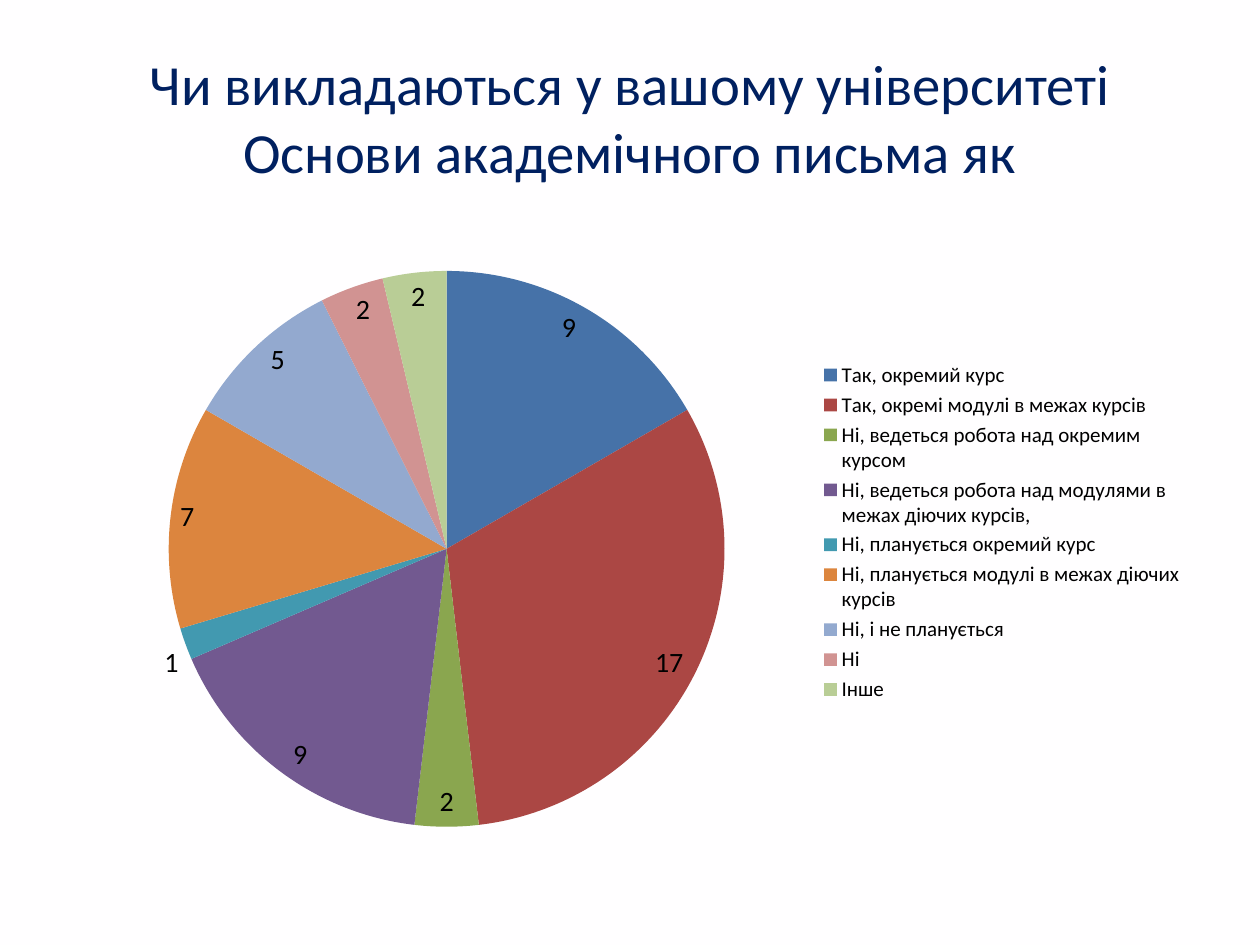
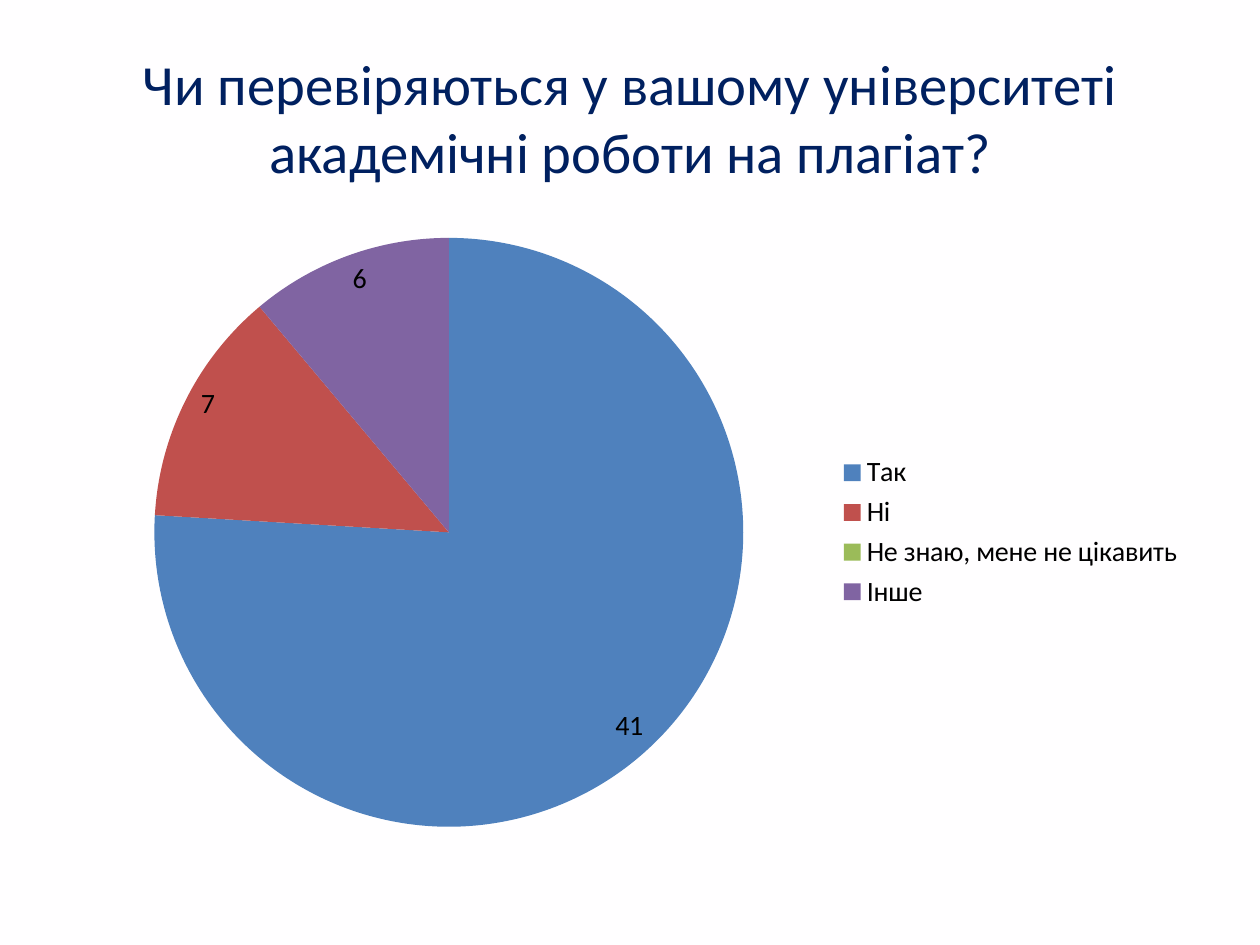
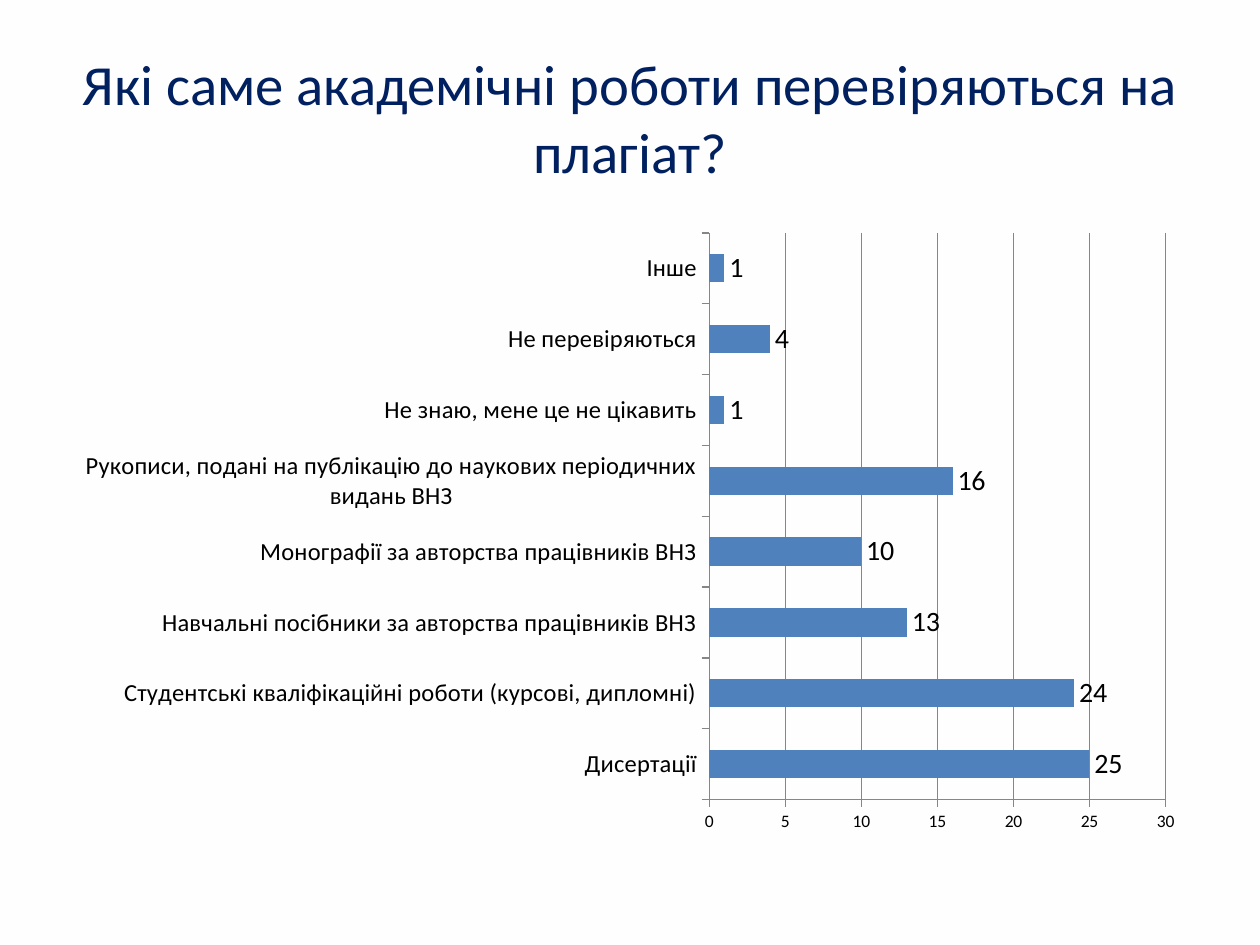
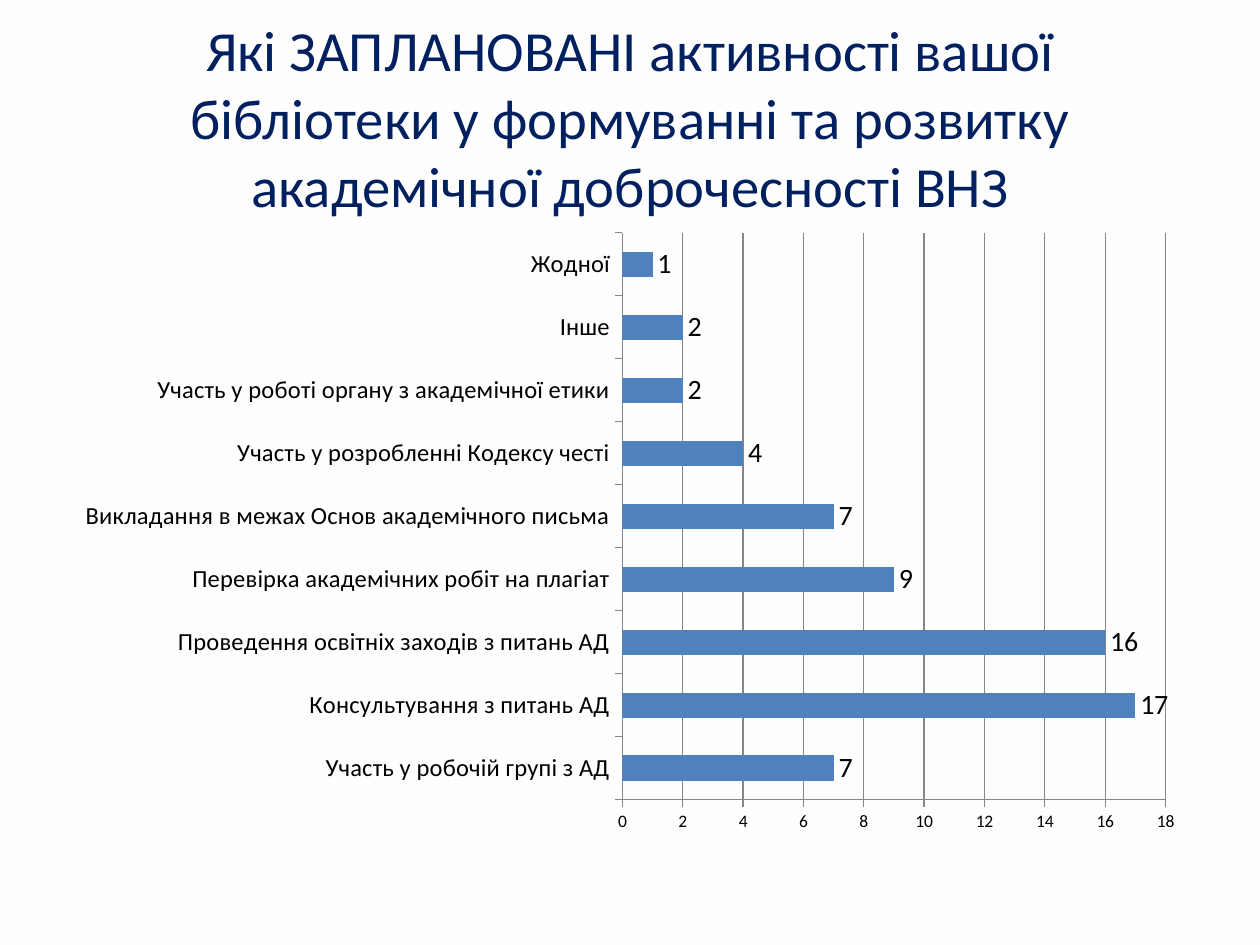
from pptx import Presentation
from pptx.chart.data import CategoryChartData
from pptx.dml.color import RGBColor
from pptx.enum import chart as kinds, text
from pptx.util import Inches, Pt

FONT = "Calibri"
NAVY, BLACK, PAPER, GREY = "002060", "000000", "FFFEFF", "868686"
BASE = ["4F81BD", "C0504D", "9BBB59", "8064A2"]
WIDE = ["4672A8", "AB4744", "8AA64F", "725990", "4299B0", "DC853E",
        "93A9CF", "D19392", "B9CD96"]
HEAD = (0.5, 0.3, 9, 1.25)
BODY = (0.5, 1.75, 9, 4.95)

COURSES = [
    ("Так, окремий курс", 9),
    ("Так, окремі модулі в межах курсів", 17),
    ("Ні, ведеться робота над окремим курсом", 2),
    ("Ні, ведеться робота над модулями в межах діючих курсів,", 9),
    ("Ні, планується окремий курс", 1),
    ("Ні, планується модулі в межах діючих курсів", 7),
    ("Ні, і не планується", 5),
    ("Ні", 2),
    ("Інше", 2),
]
CHECKS = [
    ("Так", 41),
    ("Ні", 7),
    ("Не знаю, мене не цікавить", 0),
    ("Інше", 6),
]
WORKS = [
    ("Дисертації", 25),
    ("Студентські кваліфікаційні роботи (курсові, дипломні)", 24),
    ("Навчальні посібники за авторства працівників ВНЗ", 13),
    ("Монографії за авторства працівників ВНЗ", 10),
    ("Рукописи, подані на публікацію до наукових періодичних видань ВНЗ", 16),
    ("Не знаю, мене це не цікавить", 1),
    ("Не перевіряються", 4),
    ("Інше", 1),
]
PLANS = [
    ("Участь у робочій групі з АД", 7),
    ("Консультування з питань АД", 17),
    ("Проведення освітніх заходів з питань АД", 16),
    ("Перевірка академічних робіт на плагіат", 9),
    ("Викладання в межах Основ академічного письма", 7),
    ("Участь у розробленні Кодексу честі", 4),
    ("Участь у роботі органу з академічної етики", 2),
    ("Інше", 2),
    ("Жодної", 1),
]


def paint(fill, tone):
    """Give a fill one solid colour."""
    fill.solid()
    fill.fore_color.rgb = RGBColor.from_string(tone)


def style(font, size, tone=BLACK):
    """Set the face, size and colour of a font."""
    font.name, font.size = FONT, Pt(size)
    font.color.rgb = RGBColor.from_string(tone)


def start(deck, title, box=HEAD):
    """Add a slide with its background and centred title."""
    slide = deck.slides.add_slide(deck.slide_layouts[6])
    paint(slide.background.fill, PAPER)
    frame = slide.shapes.add_textbox(*map(Inches, box)).text_frame
    frame.word_wrap = True
    frame.vertical_anchor = text.MSO_ANCHOR.MIDDLE
    frame.text = title
    line = frame.paragraphs[0]
    line.alignment = text.PP_ALIGN.CENTER
    style(line.runs[0].font, 32.4, NAVY)
    return slide


def plot(slide, kind, rows, spot, box=BODY):
    """Add a chart of labelled rows with value labels."""
    data = CategoryChartData()
    data.categories = [name for name, _ in rows]
    data.add_series("Series 1", [count for _, count in rows])
    chart = slide.shapes.add_chart(kind, *map(Inches, box), data).chart
    style(chart.font, 10)
    chart.has_title = chart.has_legend = False
    area = chart.plots[0]
    area.has_data_labels = True
    marks = area.data_labels
    marks.show_value = True
    marks.position = spot
    marks.number_format, marks.number_format_is_linked = "0;;", False
    style(marks.font, 16)
    return chart


def pie(deck, title, rows, tones, size):
    """Build a slide with a pie and a legend on its right."""
    chart = plot(start(deck, title), kinds.XL_CHART_TYPE.PIE, rows,
                 kinds.XL_LABEL_POSITION.BEST_FIT)
    chart.has_legend = True
    key = chart.legend
    key.position = kinds.XL_LEGEND_POSITION.RIGHT
    key.include_in_layout = False
    style(key.font, size)
    area = chart.plots[0]
    area.vary_by_categories = True
    for spot, tone in enumerate(tones):
        paint(area.series[0].points[spot].format.fill, tone)


def bars(deck, title, rows, top, step):
    """Build a slide with horizontal bars."""
    chart = plot(start(deck, title), kinds.XL_CHART_TYPE.BAR_CLUSTERED, rows,
                 kinds.XL_LABEL_POSITION.OUTSIDE_END)
    area = chart.plots[0]
    area.vary_by_categories = False
    area.gap_width = 150
    paint(area.series[0].format.fill, BASE[0])
    names, scale = chart.category_axis, chart.value_axis
    scale.minimum_scale, scale.maximum_scale, scale.major_unit = 0, top, step
    scale.has_major_gridlines = True
    names.has_major_gridlines = False
    for axis, size in ((names, 14), (scale, 10)):
        axis.major_tick_mark = kinds.XL_TICK_MARK.OUTSIDE
        style(axis.tick_labels.font, size)
    for edge in (names, scale, scale.major_gridlines):
        edge.format.line.width = Pt(0.75)
        paint(edge.format.line.fill, GREY)


def main():
    """Build and save the four slides."""
    deck = Presentation()
    deck.slide_width, deck.slide_height = Inches(10), Inches(7.5)
    pie(deck, "Чи викладаються у вашому університеті Основи академічного "
        "письма як", COURSES, WIDE, 12)
    pie(deck, "Чи перевіряються у вашому університеті академічні роботи "
        "на плагіат?", CHECKS, BASE, 16)
    bars(deck, "Які саме академічні роботи перевіряються на плагіат?",
         WORKS, 30, 5)
    bars(deck, "Які ЗАПЛАНОВАНІ активності вашої бібліотеки у формуванні "
         "та розвитку академічної доброчесності ВНЗ", PLANS, 18, 2)
    deck.save("out.pptx")


if __name__ == "__main__":
    main()
